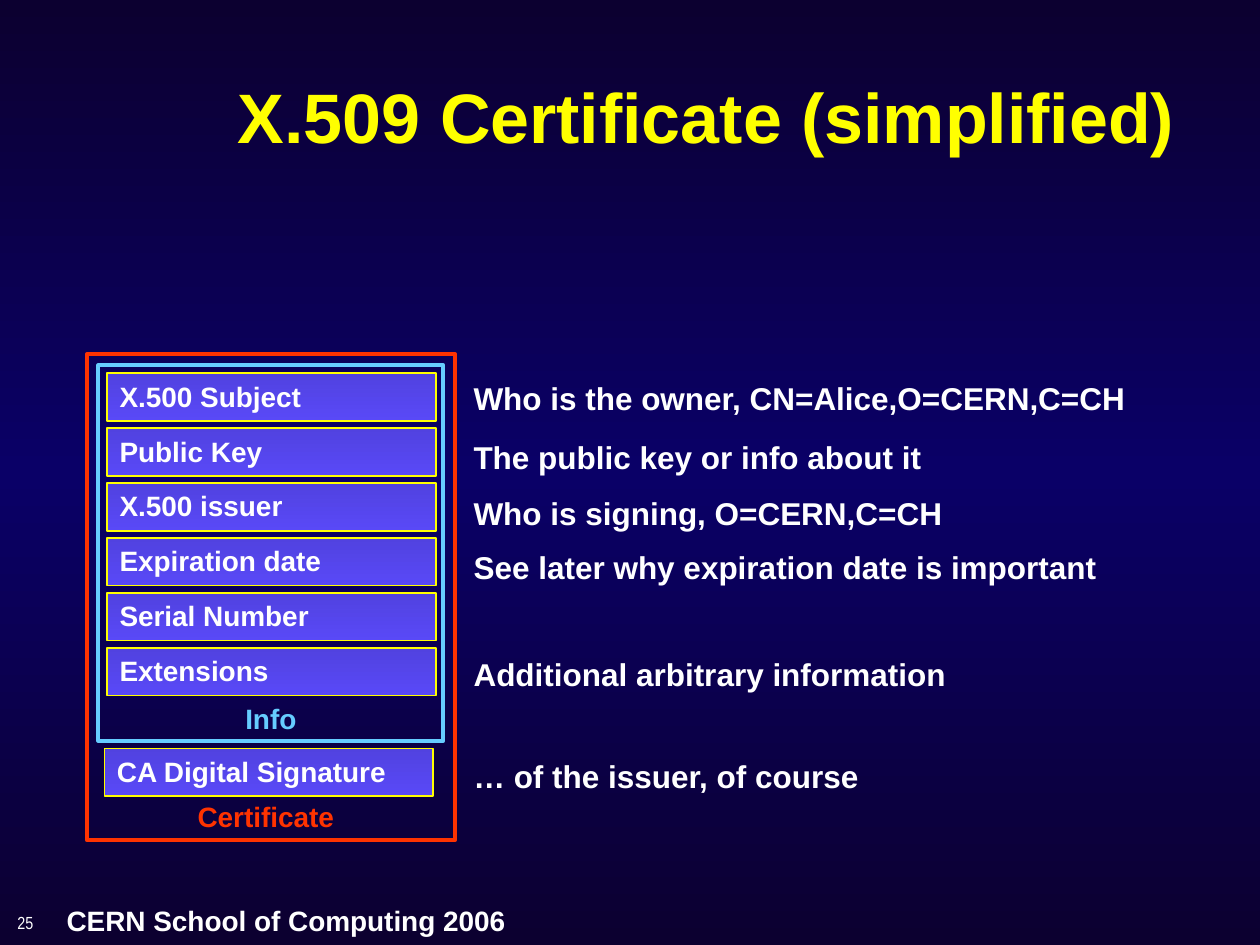
from copy import deepcopy
from dataclasses import dataclass

from pptx import Presentation
from pptx.dml.color import RGBColor
from pptx.enum.shapes import MSO_SHAPE
from pptx.enum.text import MSO_ANCHOR, PP_ALIGN
from pptx.util import Inches, Pt

RECTANGLE = MSO_SHAPE.RECTANGLE
TOP, MIDDLE = MSO_ANCHOR.TOP, MSO_ANCHOR.MIDDLE
LEFT, CENTER = PP_ALIGN.LEFT, PP_ALIGN.CENTER
BLANK_LAYOUT = 6


@dataclass(frozen=True)
class Theme:
    background: tuple = ("0C0030", "0A0067", "0C0030")
    field_fill: tuple = ("5142E0", "5949F7")
    text: str = "FFFFFF"
    accent: str = "FFFF00"
    certificate: str = "FF3300"
    info: str = "66CCFF"
    font: str = "Arial"
    narrow_font: str = "Arial Narrow"
    title_size: int = 40
    description_size: int = 18
    label_size: int = 16
    number_size: int = 10
    field_line: float = 1
    frame_line: float = 2.25


@dataclass(frozen=True)
class Box:
    left: float
    top: float
    width: float
    height: float

    def inner(self, left, top, width, height):
        return Box(self.left + left, self.top + top, width, height)

    def lengths(self):
        return [Inches(value) for value in (self.left, self.top, self.width, self.height)]


THEME = Theme()
INFO_FIELDS = (
    "X.500 Subject",
    "Public Key",
    "X.500 issuer",
    "Expiration date",
    "Serial Number",
    "Extensions",
)
FIELD_PITCH = 0.436
FIELD_WIDTH, FIELD_HEIGHT = 2.61, 0.38
DESCRIPTIONS = (
    (0, "Who is the owner, CN=Alice,O=CERN,C=CH"),
    (0.47, "The public key or info about it"),
    (0.91, "Who is signing, O=CERN,C=CH"),
    (1.34, "See later why expiration date is important"),
    (2.19, "Additional arbitrary information"),
    (3, "… of the issuer, of course"),
)


def write_text(shape, text, size=THEME.label_size, color=THEME.text, font=THEME.font,
               bold=True, align=LEFT, anchor=TOP, wrap=True):
    frame = shape.text_frame
    frame.word_wrap = wrap
    frame.vertical_anchor = anchor
    paragraph = frame.paragraphs[0]
    paragraph.alignment = align
    run = paragraph.add_run()
    run.text = text
    run.font.name = font
    run.font.size = Pt(size)
    run.font.bold = bold
    run.font.color.rgb = RGBColor.from_string(color)


def add_text(slide, box, text, **text_format):
    write_text(slide.shapes.add_textbox(*box.lengths()), text, **text_format)


def add_rectangle(slide, box, line_color, line_width):
    shape = slide.shapes.add_shape(RECTANGLE, *box.lengths())
    shape.shadow.inherit = False
    shape.fill.background()
    shape.line.color.rgb = RGBColor.from_string(line_color)
    shape.line.width = Pt(line_width)
    return shape


def set_vertical_gradient(fill, element, colors):
    fill.gradient()
    fill.gradient_angle = 270
    stop_list = element.xpath(".//a:gsLst")[0]
    while len(stop_list) < len(colors):
        stop_list.append(deepcopy(stop_list[0]))
    for index, (stop, color) in enumerate(zip(fill.gradient_stops, colors)):
        stop.position = index / (len(colors) - 1)
        stop.color.rgb = RGBColor.from_string(color)


def add_field(slide, box, text):
    shape = add_rectangle(slide, box, THEME.accent, THEME.field_line)
    set_vertical_gradient(shape.fill, shape.element, THEME.field_fill)
    write_text(shape, text)


def add_certificate(slide, box):
    add_rectangle(slide, box, THEME.certificate, THEME.frame_line)
    add_rectangle(slide, box.inner(0.09, 0.09, 2.74, 2.98), THEME.info, THEME.frame_line)
    for index, text in enumerate(INFO_FIELDS):
        top = 0.15 + index * FIELD_PITCH
        add_field(slide, box.inner(0.16, top, FIELD_WIDTH, FIELD_HEIGHT), text)
    add_field(slide, box.inner(0.14, 3.13, FIELD_WIDTH, FIELD_HEIGHT), "CA Digital Signature")
    add_text(slide, box.inner(0.74, 2.71, 1.44, 0.37), "Info", color=THEME.info, align=CENTER)
    add_text(slide, box.inner(0.7, 3.49, 1.44, 0.37), "Certificate",
             color=THEME.certificate, align=CENTER)


def add_descriptions(slide, box):
    for top, text in DESCRIPTIONS:
        add_text(slide, box.inner(0, top, box.width, 0.4), text, size=THEME.description_size)


def add_title(slide, box):
    add_text(slide, box, "X.509 Certificate (simplified)", size=THEME.title_size,
             color=THEME.accent, anchor=MIDDLE)


def add_footer(slide, box):
    add_text(slide, box.inner(0.39, 0, 3.69, 0.37), "CERN School of Computing 2006", wrap=False)
    add_text(slide, box.inner(0, 0.04, 2.08, 0.33), "25", size=THEME.number_size,
             font=THEME.narrow_font, bold=False, anchor=MIDDLE)


def main():
    presentation = Presentation()
    presentation.slide_width = Inches(10)
    presentation.slide_height = Inches(7.5)
    slide = presentation.slides.add_slide(presentation.slide_layouts[BLANK_LAYOUT])
    set_vertical_gradient(slide.background.fill, slide.element, THEME.background)
    add_footer(slide, Box(0.04, 7.12, 4.08, 0.37))
    add_title(slide, Box(1.79, 0.22, 8.21, 1.4))
    add_certificate(slide, Box(0.69, 2.81, 2.92, 3.86))
    add_descriptions(slide, Box(3.66, 2.96, 6.21, 3.4))
    presentation.save("out.pptx")


if __name__ == "__main__":
    main()
